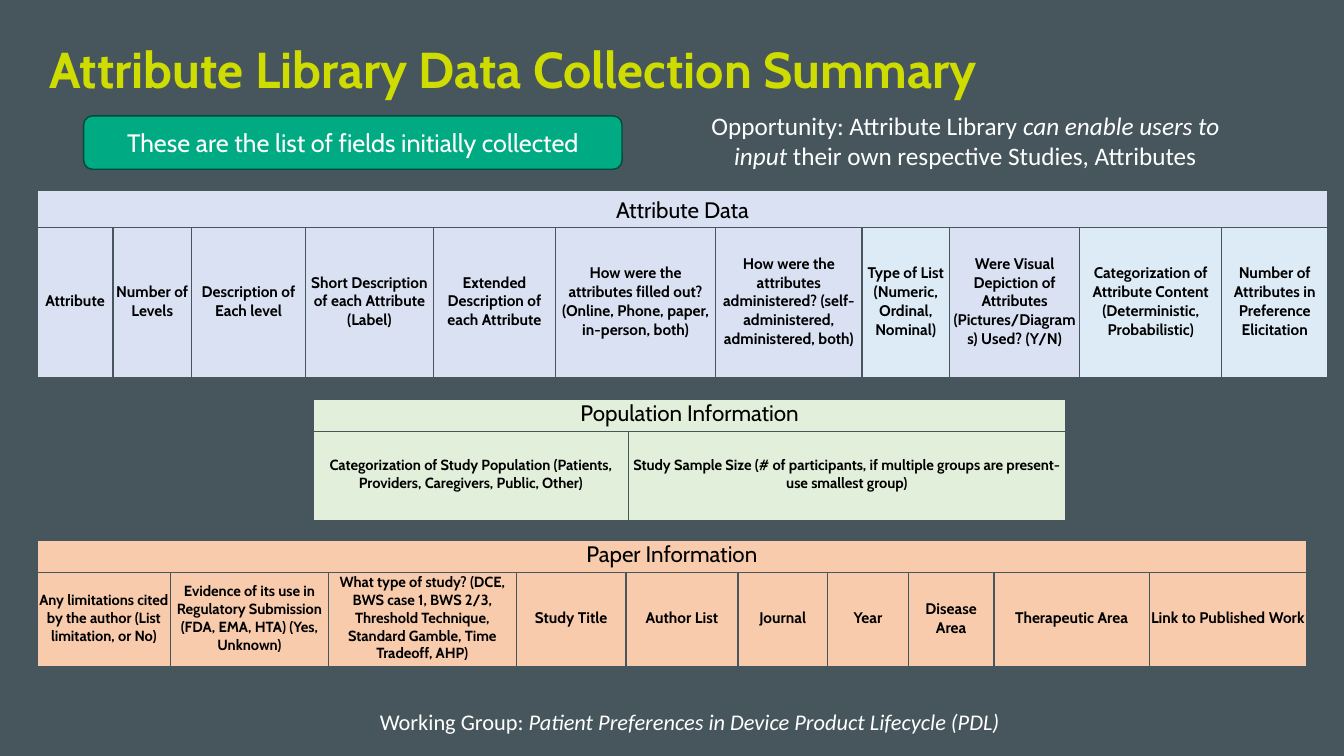
from dataclasses import dataclass

from lxml.etree import SubElement
from pptx import Presentation
from pptx.dml.color import RGBColor
from pptx.enum.shapes import MSO_SHAPE as Shape
from pptx.enum.text import MSO_ANCHOR as Anchor, MSO_AUTO_SIZE as AutoSize, PP_ALIGN as Align
from pptx.oxml.ns import qn
from pptx.util import Inches, Pt


@dataclass(frozen=True)
class Theme:
    background: str = "47555D"
    title: str = "CEDC00"
    light: str = "FFFFFF"
    dark: str = "000000"
    banner: str = "00AB83"
    banner_line: str = "004B39"
    attribute: str = "D9E1F2"
    attribute_alt: str = "DDEBF7"
    population: str = "E2EFDA"
    paper: str = "F8CBAD"
    heading_font: str = "Cabin"
    note_font: str = "Calibri"
    title_size: float = 36
    banner_size: float = 18
    heading_size: float = 16
    field_size: float = 11
    small_field_size: float = 10.5


THEME = Theme()

ATTRIBUTE_FIELDS = [
    ("Attribute", 0.75),
    ("Number of Levels", 0.78),
    ("Description of Each level", 1.13),
    ("Short Description of each Attribute (Label)", 1.27),
    ("Extended Description of each Attribute", 1.21),
    ("How were the attributes filled out? (Online, Phone, paper, in-person, both)", 1.59),
    ("How were the attributes administered? (self-administered, administered, both)", 1.45),
    ("Type of List (Numeric, Ordinal, Nominal)", 0.87),
    ("Were Visual Depiction of Attributes (Pictures/Diagrams) Used? (Y/N)", 1.29),
    ("Categorization of Attribute Content (Deterministic, Probabilistic)", 1.41),
    ("Number of Attributes in Preference Elicitation", 1.05),
]
POPULATION_FIELDS = [
    ("Categorization of Study Population (Patients, Providers, Caregivers, Public, Other)", 3.12),
    ("Study Sample Size (# of participants, if multiple groups are present- use smallest group)", 4.34),
]
PAPER_FIELDS = [
    ("Any limitations cited by the author (List limitation, or No)", 1.32),
    ("Evidence of its use in Regulatory Submission (FDA, EMA, HTA) (Yes, Unknown)", 1.57),
    ("What type of study? (DCE, BWS case 1, BWS 2/3, Threshold Technique, "
     "Standard Gamble, Time Tradeoff, AHP)", 1.86),
    ("Study Title", 1.09),
    ("Author List", 1.11),
    ("Journal", 0.89),
    ("Year", 0.8),
    ("Disease Area", 0.85),
    ("Therapeutic Area", 1.54),
    ("Link to Published Work", 1.56),
]


def rgb(color):
    return RGBColor.from_string(color)


def write(frame, *runs, size, color, font=THEME.heading_font, bold=False,
          align=Align.CENTER, anchor=Anchor.MIDDLE, spacing=None):
    frame.word_wrap = True
    frame.vertical_anchor = anchor
    paragraph = frame.paragraphs[0]
    paragraph.alignment = align
    paragraph.line_spacing = spacing
    for words, italic in runs:
        run = paragraph.add_run()
        run.text = words
        run.font.size = Pt(size)
        run.font.name = font
        run.font.color.rgb = rgb(color)
        run.font.bold = bold
        run.font.italic = italic


def add_title(slide, words):
    title = slide.shapes.title
    title.left, title.top = Inches(0.39), Inches(0.3)
    title.width, title.height = Inches(11.5), Inches(0.84)
    title.text_frame.auto_size = AutoSize.NONE
    write(title.text_frame, (words, False), size=THEME.title_size, color=THEME.title,
          bold=True, align=Align.LEFT, spacing=0.9)


def add_banner(slide, words):
    banner = slide.shapes.add_shape(Shape.ROUNDED_RECTANGLE, Inches(0.83), Inches(1.15),
                                    Inches(5.34), Inches(0.53))
    banner.shadow.inherit = False
    banner.fill.solid()
    banner.fill.fore_color.rgb = rgb(THEME.banner)
    banner.line.color.rgb = rgb(THEME.banner_line)
    banner.line.width = Pt(1)
    write(banner.text_frame, (words, False), size=THEME.banner_size, color=THEME.light)


def add_note(slide, left, top, width, height, *runs, size):
    note = slide.shapes.add_textbox(Inches(left), Inches(top), Inches(width), Inches(height))
    write(note.text_frame, *runs, size=size, color=THEME.light, font=THEME.note_font,
          anchor=Anchor.TOP)


def style_cell(cell, fill):
    cell.fill.solid()
    cell.fill.fore_color.rgb = rgb(fill)
    cell.margin_left = cell.margin_right = cell.margin_top = Inches(0.01)
    cell.margin_bottom = Inches(0.04)
    properties = cell._tc.get_or_add_tcPr()
    for position, side in enumerate("LRTB"):
        border = SubElement(properties, qn(f"a:ln{side}"), w=str(Pt(1)))
        color = SubElement(SubElement(border, qn("a:solidFill")), qn("a:srgbClr"))
        color.set("val", THEME.background)
        properties.insert(position, border)


def add_field_table(slide, heading, fields, left, top, row_heights, fill,
                    alternate_fill=None, alternates=(), small_fields=()):
    widths = [Inches(width) for _, width in fields]
    heights = [Inches(height) for height in row_heights]
    table = slide.shapes.add_table(2, len(fields), Inches(left), Inches(top),
                                   sum(widths), sum(heights)).table
    table.first_row = table.horz_banding = False
    for row, height in zip(table.rows, heights):
        row.height = height
    for index, (words, _) in enumerate(fields):
        table.columns[index].width = widths[index]
        style_cell(table.cell(0, index), fill)
        field = table.cell(1, index)
        style_cell(field, alternate_fill if index in alternates else fill)
        size = THEME.small_field_size if index in small_fields else THEME.field_size
        field.vertical_anchor = Anchor.MIDDLE
        write(field.text_frame, (words, False), size=size, color=THEME.dark, bold=True)
    header = table.cell(0, 0)
    header.merge(table.cell(0, len(fields) - 1))
    write(header.text_frame, (heading, False), size=THEME.heading_size, color=THEME.dark)
    header.vertical_anchor = Anchor.BOTTOM


def main():
    deck = Presentation()
    deck.slide_width, deck.slide_height = Inches(13.33), Inches(7.5)
    slide = deck.slides.add_slide(deck.slide_layouts[5])
    slide.background.fill.solid()
    slide.background.fill.fore_color.rgb = rgb(THEME.background)

    add_title(slide, "Attribute Library Data Collection Summary")
    add_field_table(slide, "Attribute Data", ATTRIBUTE_FIELDS, 0.37, 1.89, (0.37, 1.49),
                    THEME.attribute, THEME.attribute_alt, alternates=(7, 9, 10))
    add_field_table(slide, "Population Information", POPULATION_FIELDS, 3.11, 3.96,
                    (0.3, 0.89), THEME.population, small_fields=(0, 1))
    add_field_table(slide, "Paper Information", PAPER_FIELDS, 0.37, 5.36, (0.32, 0.93),
                    THEME.paper, small_fields=(0, 1, 2))
    add_banner(slide, "These are the list of fields initially collected")
    add_note(slide, 3.04, 6.98, 7.6, 0.37, ("Working Group: ", False),
             ("Patient Preferences in Device Product Lifecycle (PDL)", True),
             size=THEME.heading_size)
    add_note(slide, 6.67, 1.04, 5.81, 0.71, ("Opportunity: Attribute Library ", False),
             ("can enable users to input", True),
             (" their own respective Studies, Attributes", False), size=THEME.banner_size)
    deck.save("out.pptx")


if __name__ == "__main__":
    main()
